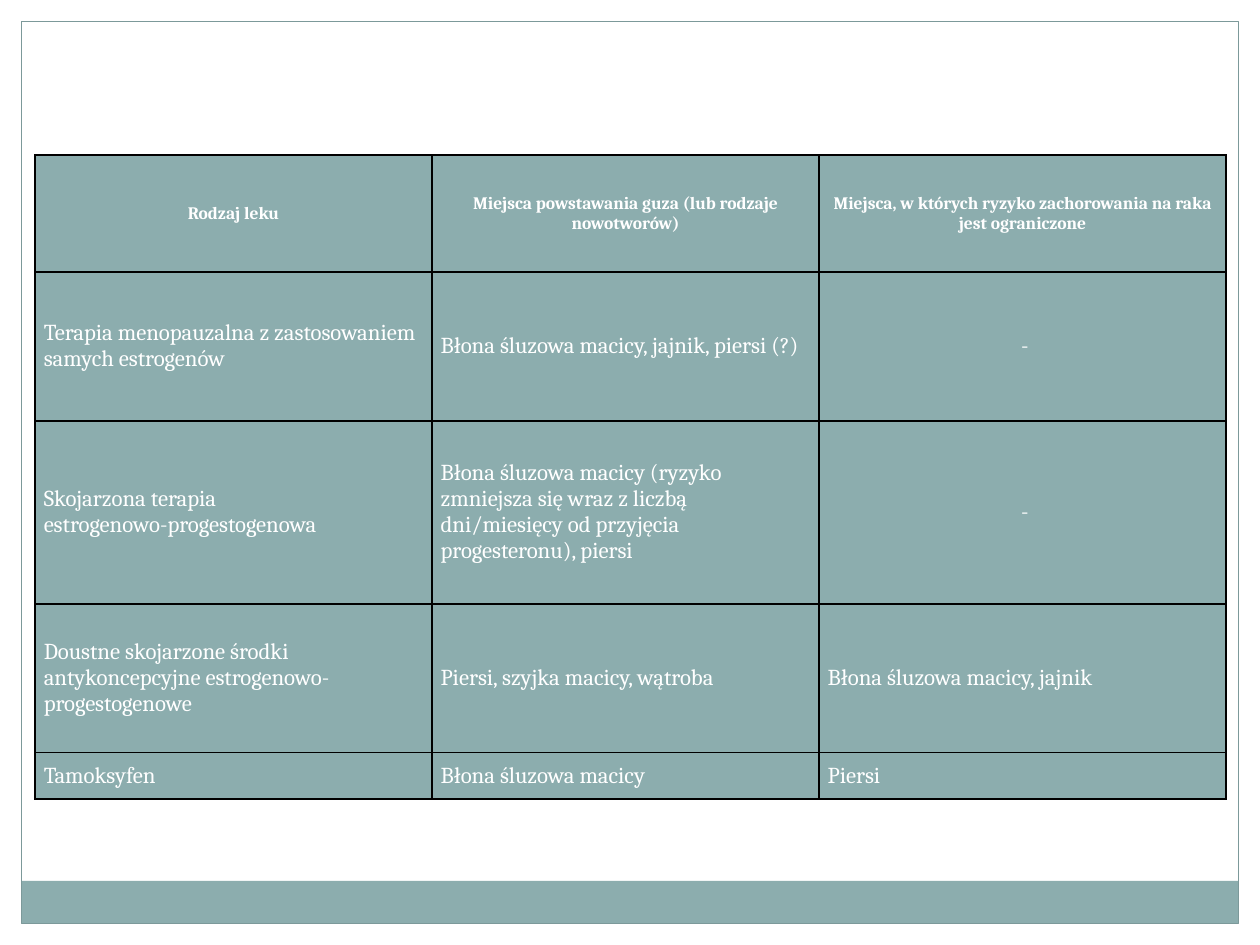
from typing import NamedTuple

from lxml.etree import SubElement
from pptx import Presentation
from pptx.dml.color import RGBColor
from pptx.enum.shapes import MSO_SHAPE as Shape
from pptx.enum.text import MSO_ANCHOR as Anchor, PP_ALIGN as Align
from pptx.oxml.ns import qn
from pptx.util import Pt

WHITE, TEAL, FRAME, BLACK = "FFFFFF", "8CADAE", "7C999A", "000000"
FONT = "Cambria"
SLIDE_WIDTH, SLIDE_HEIGHT, MARGIN = 720, 540, 12.24
INNER_WIDTH, INNER_HEIGHT = SLIDE_WIDTH - 2 * MARGIN, SLIDE_HEIGHT - 2 * MARGIN
TABLE_LEFT, TABLE_TOP = 20, 88.5
COLUMN_WIDTHS = [226.8, 221.2, 232.5]
ROW_HEIGHTS = [67, 85, 104.6, 85, 26.6]
DASH = " -"


class Panel(NamedTuple):
    left: float
    top: float
    width: float
    height: float
    fill: str | None = None
    line: str | None = None


PANELS = [
    Panel(0, 0, SLIDE_WIDTH, MARGIN, WHITE),
    Panel(SLIDE_WIDTH - MARGIN, 0, MARGIN, SLIDE_HEIGHT, WHITE),
    Panel(0, 0, MARGIN, SLIDE_HEIGHT, WHITE),
    Panel(MARGIN, 503.3, INNER_WIDTH, 24.4, TEAL),
    Panel(MARGIN, MARGIN, INNER_WIDTH, INNER_HEIGHT, line=FRAME),
]

ROWS = [
    ["Rodzaj leku", "Miejsca powstawania guza (lub rodzaje nowotworów)",
     "Miejsca, w których ryzyko zachorowania na raka jest ograniczone"],
    ["Terapia menopauzalna z zastosowaniem samych estrogenów",
     "Błona śluzowa macicy, jajnik, piersi (?)", DASH],
    ["Skojarzona terapia\nestrogenowo-progestogenowa",
     "Błona śluzowa macicy (ryzyko zmniejsza się wraz z liczbą dni/miesięcy "
     "od przyjęcia progesteronu), piersi", DASH],
    ["Doustne skojarzone środki antykoncepcyjne estrogenowo-progestogenowe",
     "Piersi, szyjka macicy, wątroba", "Błona śluzowa macicy, jajnik"],
    ["Tamoksyfen", "Błona śluzowa macicy", "Piersi"],
]


def color(value: str) -> RGBColor:
    return RGBColor.from_string(value)


def draw_panel(slide, panel: Panel) -> None:
    box = [Pt(length) for length in panel[:4]]
    shape = slide.shapes.add_shape(Shape.RECTANGLE, *box)
    shape.shadow.inherit = False
    if panel.fill:
        shape.fill.solid()
        shape.fill.fore_color.rgb = color(panel.fill)
    else:
        shape.fill.background()
    if panel.line:
        shape.line.color.rgb = color(panel.line)
        shape.line.width = Pt(0.75)
    else:
        shape.line.fill.background()


def write_text(frame, text: str, *, size: float, bold: bool = False,
               align: Align = Align.LEFT) -> None:
    paragraph = frame.paragraphs[0]
    paragraph.text = text
    paragraph.alignment = align
    for run in paragraph.runs:
        font = run.font
        font.name, font.size, font.bold = FONT, Pt(size), bold
        font.color.rgb = color(WHITE)
    for line_break in paragraph._p.findall(qn("a:br")):
        SubElement(line_break, qn("a:rPr"), sz=str(int(size * 100)))


def add_borders(cell, value: str, width: float) -> None:
    properties = cell._tc.get_or_add_tcPr()
    for position, side in enumerate(("lnL", "lnR", "lnT", "lnB")):
        line = SubElement(properties, qn(f"a:{side}"), w=str(Pt(width)))
        fill = SubElement(line, qn("a:solidFill"))
        SubElement(fill, qn("a:srgbClr"), val=value)
        properties.insert(position, line)


def format_cell(cell) -> None:
    cell.fill.solid()
    cell.fill.fore_color.rgb = color(TEAL)
    cell.vertical_anchor = Anchor.MIDDLE
    cell.margin_left = cell.margin_right = Pt(5)
    cell.margin_top = cell.margin_bottom = Pt(2.9)
    add_borders(cell, BLACK, 1)


def draw_table(slide) -> None:
    table = slide.shapes.add_table(
        len(ROWS), len(COLUMN_WIDTHS), Pt(TABLE_LEFT), Pt(TABLE_TOP),
        Pt(sum(COLUMN_WIDTHS)), Pt(sum(ROW_HEIGHTS))).table
    for column, width in zip(table.columns, COLUMN_WIDTHS):
        column.width = Pt(width)
    for row_index, (row, height, texts) in enumerate(zip(table.rows, ROW_HEIGHTS, ROWS)):
        row.height = Pt(height)
        header = row_index == 0
        for cell, text in zip(row.cells, texts):
            format_cell(cell)
            centered = header or text == DASH
            write_text(cell.text_frame, text, size=10 if header else 13, bold=header,
                       align=Align.CENTER if centered else Align.LEFT)


def main() -> None:
    """Build the slide with the table of drugs and tumour sites."""
    presentation = Presentation()
    presentation.slide_width, presentation.slide_height = Pt(SLIDE_WIDTH), Pt(SLIDE_HEIGHT)
    slide = presentation.slides.add_slide(presentation.slide_layouts[6])
    for panel in PANELS:
        draw_panel(slide, panel)
    draw_table(slide)
    presentation.save("out.pptx")


if __name__ == "__main__":
    main()
